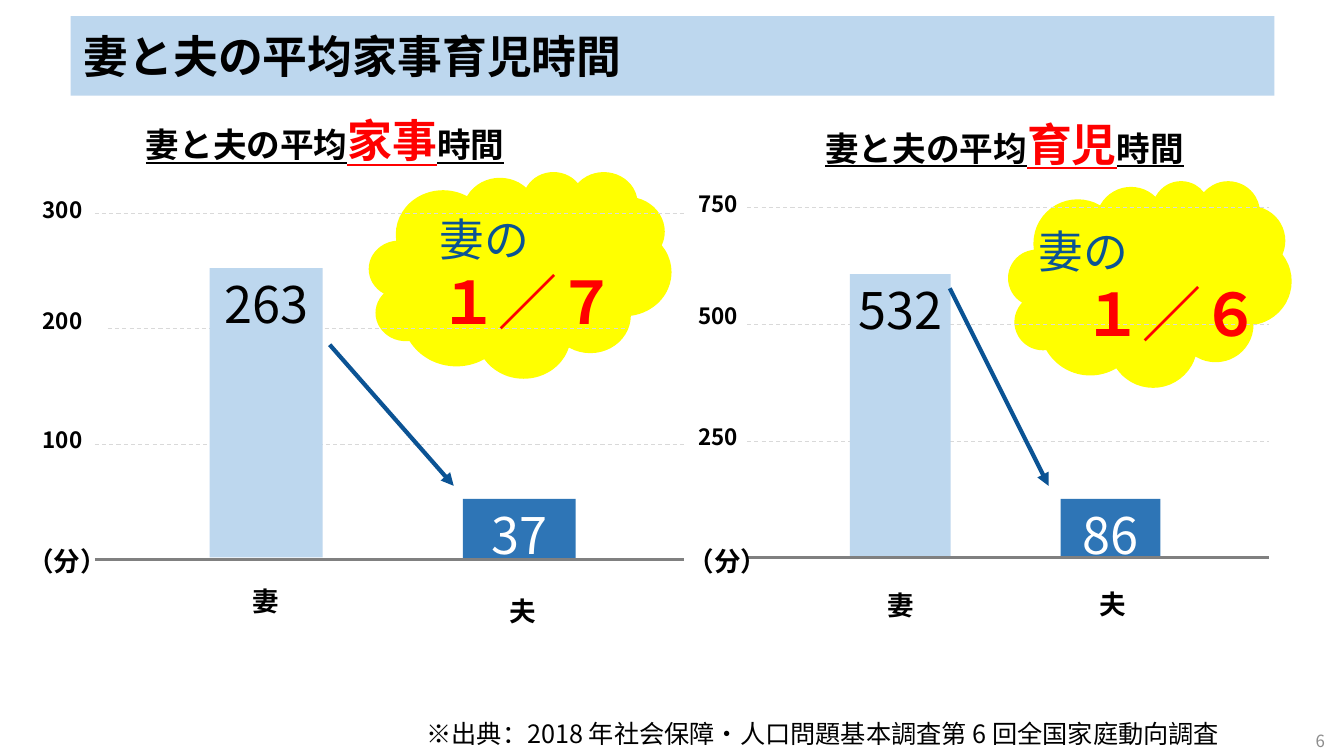
from dataclasses import dataclass

from lxml import etree
from pptx import Presentation
from pptx.dml.color import RGBColor
from pptx.enum.dml import MSO_LINE
from pptx.enum.shapes import MSO_CONNECTOR, MSO_SHAPE
from pptx.enum.text import MSO_ANCHOR, MSO_AUTO_SIZE, PP_ALIGN
from pptx.oxml.ns import qn
from pptx.util import Inches, Pt

LEFT, CENTER = PP_ALIGN.LEFT, PP_ALIGN.CENTER
TOP, MIDDLE = MSO_ANCHOR.TOP, MSO_ANCHOR.MIDDLE
RECT, CLOUD = MSO_SHAPE.RECTANGLE, MSO_SHAPE.CLOUD
STRAIGHT, DASH = MSO_CONNECTOR.STRAIGHT, MSO_LINE.DASH


@dataclass(frozen=True)
class Theme:
    font: str = "Noto Sans CJK JP"
    black: str = "000000"
    white: str = "FFFFFF"
    red: str = "FF0000"
    yellow: str = "FFFF00"
    pale: str = "BDD7EE"
    blue: str = "2E75B6"
    navy: str = "0B5394"
    grid: str = "D9D9D9"
    axis: str = "808080"
    muted: str = "8C8C8C"
    title: int = 32
    heading: int = 24
    ratio: int = 42
    value: int = 36
    label: int = 19
    tick: int = 16
    source: int = 18
    page: int = 12


T = Theme()
BLACK_BOLD = {"color": T.black, "bold": True}
LABEL = {"size": T.label, **BLACK_BOLD}
TICK = {"size": T.tick, **BLACK_BOLD}
HEADING = {"size": T.heading, "underline": True, **BLACK_BOLD}
KEYWORD = {**HEADING, "size": T.title, "color": T.red}

HOUSEWORK = {
    "keyword": "家事", "heading": (0.31, 1.01),
    "cloud": (3.66, 1.7, 3, 2.05),
    "grid": [(0.94, 6.78, 2.12), (1.07, 6.21, 3.26), (0.94, 6.78, 4.41)],
    "axis": (0.94, 6.78, 5.55),
    "ticks": [("300", 1.85), ("200", 2.95), ("100", 4.13)],
    "tick_box": (0.17, 0.9),
    "bars": [("263", (2.08, 2.66, 1.12, 2.87), T.pale, T.black),
             ("37", (4.59, 4.95, 1.12, 0.59), T.blue, T.white)],
    "labels": [("妻", (1.53, 5.56, 2.21, 0.8)), ("夫", (4.1, 5.56, 2.17, 1.01))],
    "arrow": (3.27, 3.42, 4.5, 4.82),
    "ratio": "１／７", "ratio_box": (4.26, 2, 2.26, 1.45), "ratio_indent": 0,
    "unit": (-0.07, 5.21),
}
CHILDCARE = {
    "keyword": "育児", "heading": (7.05, 1.04),
    "cloud": (10, 1.79, 2.81, 2.05),
    "grid": [(7.41, 12.59, y) for y in (2.06, 3.22, 4.38)],
    "axis": (7.41, 12.59, 5.53),
    "ticks": [("750", 1.79), ("500", 2.9), ("250", 4.1)],
    "tick_box": (6.72, 0.8),
    "bars": [("532", (8.43, 2.72, 1, 2.8), T.pale, T.black),
             ("86", (10.52, 4.95, 0.99, 0.57), T.blue, T.white)],
    "labels": [("妻", (7.97, 5.49, 1.93, 1.02)), ("夫", (10.07, 5.48, 1.93, 1.02))],
    "arrow": (9.42, 2.86, 10.4, 4.82),
    "ratio": "１／６", "ratio_box": (10.2, 2.12, 2.56, 1.45), "ratio_indent": 0.45,
    "unit": (6.48, 5.21),
}


def add_run(p, text, size, color, **formats):
    r = p.add_run()
    r.text = text
    r.font.color.rgb = RGBColor.from_string(color)
    for name, value in {"size": Pt(size), "name": T.font, **formats}.items():
        setattr(r.font, name, value)
    east_asian = etree.SubElement(r._r.get_or_add_rPr(), qn("a:ea"))
    east_asian.set("typeface", T.font)


def fill_text(tf, paragraphs, align=CENTER, anchor=TOP, inset=(0.1, 0.1), wrap=True):
    """Write paragraphs, each a list of (text, format) runs, into a text frame."""
    across, down = map(Inches, inset)
    formats = {"word_wrap": wrap, "auto_size": MSO_AUTO_SIZE.NONE,
               "vertical_anchor": anchor,
               "margin_left": across, "margin_right": across,
               "margin_top": down, "margin_bottom": down}
    for name, value in formats.items():
        setattr(tf, name, value)
    for i, runs in enumerate(paragraphs):
        p = tf.add_paragraph() if i else tf.paragraphs[0]
        p.alignment = align
        for text, run_format in runs:
            add_run(p, text, **run_format)


def add_text(s, box, paragraphs, **layout):
    tf = s.shapes.add_textbox(*map(Inches, box)).text_frame
    fill_text(tf, paragraphs, **layout)
    return tf


def add_label(s, box, *runs):
    add_text(s, box, [runs], anchor=MIDDLE, inset=(0.13, 0.07))


def add_filled(s, kind, box, color):
    sp = s.shapes.add_shape(kind, *map(Inches, box))
    sp.shadow.inherit = False
    sp.fill.solid()
    sp.fill.fore_color.rgb = RGBColor.from_string(color)
    sp.line.fill.background()
    return sp


def add_line(s, ends, color, width, dash=None, arrow=False):
    line = s.shapes.add_connector(STRAIGHT, *map(Inches, ends))
    line.line.color.rgb = RGBColor.from_string(color)
    line.line.width = Pt(width)
    if dash:
        line.line.dash_style = dash
    if arrow:
        tail = etree.SubElement(line.line._get_or_add_ln(), qn("a:tailEnd"))
        tail.set("type", "triangle")
    etree.SubElement(line._element.spPr, qn("a:effectLst"))


def add_title(s, text):
    title = s.shapes.title
    bounds = zip(("left", "top", "width", "height"), (0.7, 0.16, 11.94, 0.79))
    for name, value in bounds:
        setattr(title, name, Inches(value))
    title.fill.solid()
    title.fill.fore_color.rgb = RGBColor.from_string(T.pale)
    fill_text(title.text_frame, [[(text, {"size": T.title, **BLACK_BOLD})]],
              align=LEFT, anchor=MIDDLE, inset=(0.13, 0.13))


def add_comparison(s, chart):
    """Draw one hand-scaled bar comparison with its heading and ratio cloud."""
    add_filled(s, CLOUD, chart["cloud"], T.yellow)
    add_label(s, (*chart["heading"], 5.83, 0.76), ("妻と夫の平均", HEADING),
              (chart["keyword"], KEYWORD), ("時間", HEADING))
    for x1, x2, y in chart["grid"]:
        add_line(s, (x1, y, x2, y), T.grid, 0.75, dash=DASH)
    for value, box, fill, color in chart["bars"]:
        bar = add_filled(s, RECT, box, fill)
        fill_text(bar.text_frame, [[(value, {"size": T.value, "color": color})]],
                  inset=(0.1, 0.05), wrap=False)
    x1, x2, y = chart["axis"]
    add_line(s, (x1, y, x2, y), T.axis, 2.25)
    add_line(s, chart["arrow"], T.navy, 3, arrow=True)
    for text, box in chart["labels"]:
        add_label(s, box, (text, LABEL))
    left, width = chart["tick_box"]
    for text, top in chart["ticks"]:
        add_text(s, (left, top, width, 0.47), [[(text, TICK)]])
    tf = add_text(s, chart["ratio_box"], [
        [("妻の", {"size": T.title, "color": T.navy})],
        [(chart["ratio"], {"size": T.ratio, "color": T.red, "bold": True})],
    ], align=LEFT)
    indent = Inches(chart["ratio_indent"])
    tf.paragraphs[1]._p.get_or_add_pPr().set("marL", str(indent))
    add_label(s, (*chart["unit"], 1.47, 0.71), ("（分）", LABEL))


def main():
    prs = Presentation()
    prs.slide_width, prs.slide_height = Inches(13.33), Inches(7.5)
    s = prs.slides.add_slide(prs.slide_layouts[5])
    add_title(s, "妻と夫の平均家事育児時間")
    for chart in (HOUSEWORK, CHILDCARE):
        add_comparison(s, chart)
    source = "※出典：2018 年社会保障・人口問題基本調査第 6 回全国家庭動向調査"
    add_text(s, (4.1, 7, 8.72, 0.57),
             [[(source, {"size": T.source, "color": T.black})]],
             align=LEFT, inset=(0.13, 0.13))
    add_text(s, (12.88, 7.2, 0.43, 0.25),
             [[("6", {"size": T.page, "color": T.muted})]], inset=(0.05, 0.05))
    prs.save("out.pptx")


if __name__ == "__main__":
    main()
